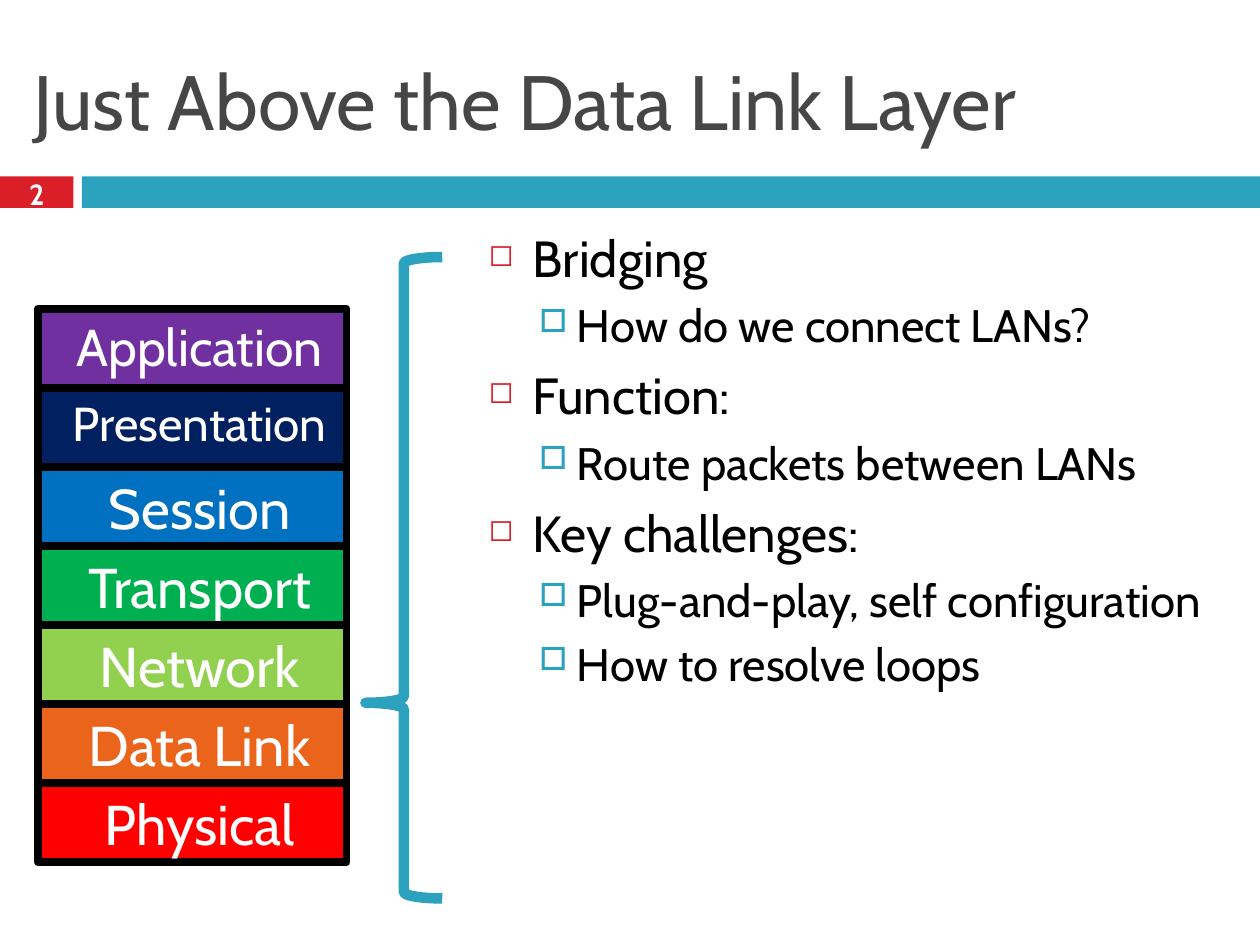
"""Build the slide that places bridging just above the data link layer."""
from dataclasses import dataclass

from lxml.etree import SubElement
from pptx import Presentation
from pptx.dml.color import RGBColor
from pptx.enum.shapes import MSO_SHAPE as Preset
from pptx.enum.text import MSO_ANCHOR as Anchor, MSO_AUTO_SIZE as AutoSize, PP_ALIGN as Align
from pptx.oxml.ns import qn
from pptx.shapes.autoshape import Shape
from pptx.slide import Slide
from pptx.text.text import _Paragraph as Paragraph
from pptx.util import Pt

FONT = "Cabin"
BLACK = RGBColor(0x00, 0x00, 0x00)
WHITE = RGBColor(0xFF, 0xFF, 0xFF)
GREY = RGBColor(0x46, 0x46, 0x46)
RED = RGBColor(0xDA, 0x1F, 0x28)
TEAL = RGBColor(0x2D, 0xA2, 0xBF)


@dataclass(frozen=True)
class Area:
    left: float
    top: float
    width: float
    height: float


@dataclass(frozen=True)
class Layer:
    name: str
    fill: RGBColor
    size: float = 32


@dataclass(frozen=True)
class Level:
    size: float
    before: float
    margin: float
    hanging: float
    bullet: str
    bullet_percent: int
    bullet_color: RGBColor


LAYERS = (
    Layer("Application", RGBColor(0x70, 0x30, 0xA0), 29.6),
    Layer("Presentation", RGBColor(0x00, 0x20, 0x60), 27.2),
    Layer("Session", RGBColor(0x00, 0x70, 0xC0)),
    Layer("Transport", RGBColor(0x00, 0xB0, 0x50)),
    Layer("Network", RGBColor(0x92, 0xD0, 0x50)),
    Layer("Data Link", RGBColor(0xEB, 0x64, 0x1B)),
    Layer("Physical", RGBColor(0xFF, 0x00, 0x00)),
)
STACK = Area(176.4 / 8.17, 176.4, 176.4, 316.4)

TOPIC = Level(29, 7, 25.2, 25.2, "◻", 60, RED)
DETAIL = Level(26, 5.5, 50.4, 21.6, "□", 70, TEAL)
OUTLINE = (
    ("Bridging", ("How do we connect LANs?",)),
    ("Function:", ("Route packets between LANs",)),
    ("Key challenges:", ("Plug-and-play, self configuration", "How to resolve loops")),
)


def place(shape: Shape, area: Area) -> None:
    """Move and size a shape."""
    shape.left, shape.top = Pt(area.left), Pt(area.top)
    shape.width, shape.height = Pt(area.width), Pt(area.height)


def style(para: Paragraph, size: float, color: RGBColor, bold: bool = False) -> None:
    """Set the font of a paragraph."""
    para.font.name = FONT
    para.font.size = Pt(size)
    para.font.bold = bold
    para.font.color.rgb = color


def add_preset(page: Slide, preset: Preset, area: Area) -> Shape:
    """Add a preset shape without fill, line or shadow."""
    shape = page.shapes.add_shape(preset, 0, 0, 0, 0)
    place(shape, area)
    shape.shadow.inherit = False
    shape.fill.background()
    shape.line.fill.background()
    return shape


def add_block(page: Slide, area: Area, fill: RGBColor) -> Shape:
    """Add a filled rectangle."""
    block = add_preset(page, Preset.RECTANGLE, area)
    block.fill.solid()
    block.fill.fore_color.rgb = fill
    return block


def outline(shape: Shape, color: RGBColor, width: float) -> None:
    """Give a shape a solid line."""
    shape.line.color.rgb = color
    shape.line.width = Pt(width)


def add_title(page: Slide, text: str) -> None:
    """Fill and format the title placeholder."""
    title = page.shapes.title
    place(title, Area(12, 18, 696, 78))
    frame = title.text_frame
    frame.text = text
    frame.auto_size = AutoSize.NONE
    frame.vertical_anchor = Anchor.MIDDLE
    para = frame.paragraphs[0]
    para.alignment = Align.LEFT
    style(para, 44, GREY)


def add_banner(page: Slide, number: str) -> None:
    """Add the coloured bar with the slide number."""
    add_block(page, Area(0, 100.8, 42, 18), RED)
    add_block(page, Area(46.8, 100.8, 673.2, 18), TEAL)
    box = page.shapes.add_textbox(0, Pt(98.8), Pt(42), Pt(24))
    frame = box.text_frame
    frame.word_wrap = True
    frame.vertical_anchor = Anchor.MIDDLE
    para = frame.paragraphs[0]
    para.text = number
    para.alignment = Align.CENTER
    style(para, 16.6, WHITE, bold=True)


def add_stack(page: Slide) -> None:
    """Draw the network layers from top to bottom."""
    step = STACK.height / len(LAYERS)
    for index, layer in enumerate(LAYERS):
        area = Area(STACK.left, STACK.top + index * step, STACK.width, step)
        block = add_block(page, area, layer.fill)
        outline(block, BLACK, 4.5)
        frame = block.text_frame
        frame.vertical_anchor = Anchor.TOP
        para = frame.paragraphs[0]
        para.text = layer.name
        para.alignment = Align.CENTER
        para._p.get_or_add_pPr().set("marL", str(Pt(8.64)))
        style(para, layer.size, WHITE)


def add_brace(page: Slide) -> None:
    """Draw the brace that points at the data link layer."""
    brace = add_preset(page, Preset.LEFT_BRACE, Area(208.8, 146.9, 43.9, 366.5))
    brace.adjustments[0] = 0.083
    brace.adjustments[1] = 0.695
    outline(brace, TEAL, 6)


def write_item(para: Paragraph, text: str, level: Level) -> None:
    """Write one bulleted line."""
    para.text = text
    para.alignment = Align.LEFT
    para.space_before = Pt(level.before)
    props = para._p.get_or_add_pPr()
    props.set("marL", str(Pt(level.margin)))
    props.set("indent", str(-Pt(level.hanging)))
    color = SubElement(props, qn("a:buClr"))
    SubElement(color, qn("a:srgbClr"), val=str(level.bullet_color))
    SubElement(props, qn("a:buSzPct"), val=str(level.bullet_percent * 1000))
    SubElement(props, qn("a:buChar"), char=level.bullet)
    style(para, level.size, BLACK)


def add_outline(page: Slide) -> None:
    """Write the topics and their details."""
    box = page.shapes.add_textbox(Pt(272.2), Pt(126), Pt(436.3), Pt(401.8))
    frame = box.text_frame
    frame.word_wrap = True
    items = [
        item
        for topic, details in OUTLINE
        for item in ((topic, TOPIC), *((detail, DETAIL) for detail in details))
    ]
    for index, (text, level) in enumerate(items):
        para = frame.add_paragraph() if index else frame.paragraphs[0]
        write_item(para, text, level)


def main() -> None:
    """Build and save the deck."""
    deck = Presentation()
    deck.slide_width, deck.slide_height = Pt(720), Pt(540)
    page = deck.slides.add_slide(deck.slide_layouts[5])
    add_title(page, "Just Above the Data Link Layer")
    add_banner(page, "2")
    add_outline(page)
    add_stack(page)
    add_brace(page)
    deck.save("out.pptx")


if __name__ == "__main__":
    main()
